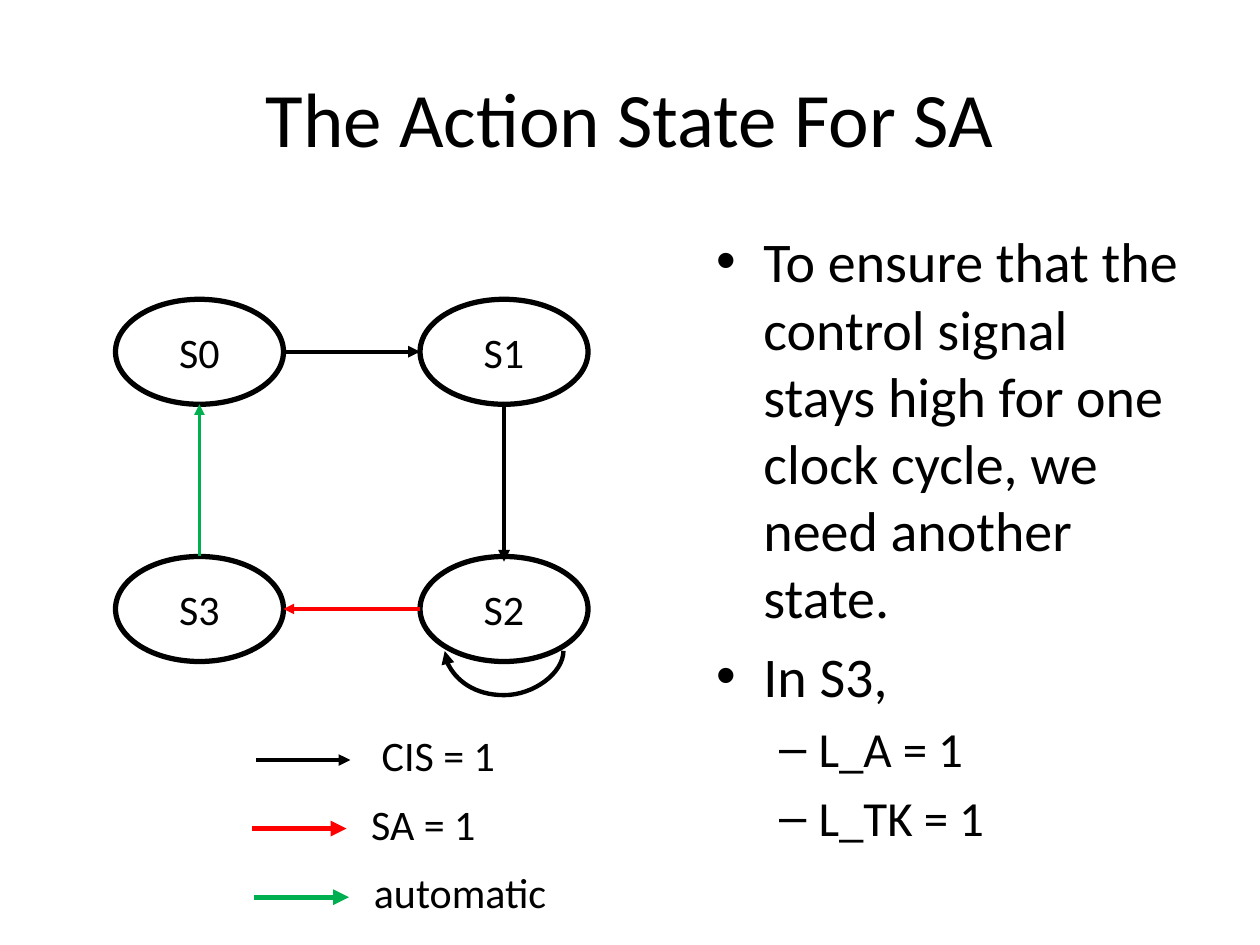
from dataclasses import dataclass

from lxml.etree import SubElement
from pptx import Presentation
from pptx.dml.color import RGBColor
from pptx.enum.shapes import MSO_CONNECTOR, MSO_SHAPE
from pptx.enum.text import MSO_ANCHOR, MSO_AUTO_SIZE, PP_ALIGN
from pptx.oxml.ns import qn
from pptx.util import Pt

COLORS = {"ink": "000000", "sa": "FF0000", "automatic": "00B050"}
STATE_WIDTH, STATE_HEIGHT = 96, 60
LEGEND_LENGTH = 54


@dataclass(frozen=True)
class State:
    label: str
    left: float
    top: float

    @property
    def center(self) -> float:
        return self.left + STATE_WIDTH / 2

    @property
    def middle(self) -> float:
        return self.top + STATE_HEIGHT / 2

    @property
    def right(self) -> float:
        return self.left + STATE_WIDTH

    @property
    def bottom(self) -> float:
        return self.top + STATE_HEIGHT


@dataclass(frozen=True)
class Arrow:
    start: tuple[float, float]
    end: tuple[float, float]
    color: str
    weight: float
    kind: MSO_CONNECTOR = MSO_CONNECTOR.STRAIGHT


@dataclass(frozen=True)
class Legend:
    label: str
    color: str
    weight: float
    line_left: float
    label_left: float
    label_width: float


def rgb(color: str) -> RGBColor:
    return RGBColor.from_string(COLORS[color])


def apply_format(target, values: dict) -> None:
    for attribute, value in values.items():
        setattr(target, attribute, value)


def place(shape, left: float, top: float, width: float, height: float) -> None:
    apply_format(shape, {"left": Pt(left), "top": Pt(top),
                         "width": Pt(width), "height": Pt(height)})


def write(paragraph, words: str, size: float) -> None:
    run = paragraph.add_run()
    run.text = words
    apply_format(run.font, {"name": "Calibri", "size": Pt(size)})
    run.font.color.rgb = rgb("ink")


def draw_state(slide, state: State) -> None:
    oval = slide.shapes.add_shape(MSO_SHAPE.OVAL, Pt(state.left), Pt(state.top),
                                  Pt(STATE_WIDTH), Pt(STATE_HEIGHT))
    oval.shadow.inherit = False
    oval.fill.background()
    oval.line.color.rgb = rgb("ink")
    oval.line.width = Pt(3)
    apply_format(oval.text_frame, {"word_wrap": False, "vertical_anchor": MSO_ANCHOR.MIDDLE})
    label = oval.text_frame.paragraphs[0]
    label.alignment = PP_ALIGN.CENTER
    write(label, state.label, 24)


def draw_arrow(slide, arrow: Arrow):
    connector = slide.shapes.add_connector(
        arrow.kind, *(Pt(value) for value in arrow.start + arrow.end))
    connector.line.color.rgb = rgb(arrow.color)
    connector.line.width = Pt(arrow.weight)
    SubElement(connector.line._get_or_add_ln(), qn("a:tailEnd"), type="triangle")
    SubElement(connector._element.spPr, qn("a:effectLst"))
    return connector


def draw_self_loop(slide, center: float, middle: float, span: float, depth: float) -> None:
    thickness = 0.12
    loop = draw_arrow(slide, Arrow((center, middle - span / 2),
                                   (center + thickness, middle + span / 2),
                                   "ink", 2.5, MSO_CONNECTOR.CURVE))
    properties = loop._element.spPr
    properties.find(qn("a:xfrm")).set("rot", "5400000")
    adjustments = properties.find(qn("a:prstGeom")).find(qn("a:avLst"))
    bend = round(depth / thickness * 100000)
    SubElement(adjustments, qn("a:gd"), name="adj1", fmla=f"val {bend}")


def draw_legend(slide, legend: Legend, middle: float) -> None:
    draw_arrow(slide, Arrow((legend.line_left, middle),
                            (legend.line_left + LEGEND_LENGTH, middle),
                            legend.color, legend.weight))
    caption = slide.shapes.add_textbox(Pt(legend.label_left), Pt(middle - 20.9),
                                       Pt(legend.label_width), Pt(36.4))
    apply_format(caption.text_frame, {"word_wrap": False,
                                      "auto_size": MSO_AUTO_SIZE.SHAPE_TO_FIT_TEXT})
    write(caption.text_frame.paragraphs[0], legend.label, 24)


def main() -> None:
    deck = Presentation()
    apply_format(deck, {"slide_width": Pt(720), "slide_height": Pt(540)})
    slide = deck.slides.add_slide(deck.slide_layouts[1])

    title, body = slide.placeholders
    place(title, 36, 21.6, 648, 90)
    write(title.text_frame.paragraphs[0], "The Action State For SA", 44)

    place(body, 402, 126, 282, 356.4)
    points = [
        (0, "To ensure that the control signal stays high for one clock cycle, "
            "we need another state."),
        (0, "In S3,"),
        (1, "L_A = 1"),
        (1, "L_TK = 1"),
    ]
    for number, (level, words) in enumerate(points):
        frame = body.text_frame
        paragraph = frame.add_paragraph() if number else frame.paragraphs[0]
        paragraph.level = level
        write(paragraph, words, 28 if level else 32)

    left, right, upper, lower = 66, 240, 171, 318
    s0, s1 = State("S0", left, upper), State("S1", right, upper)
    s2, s3 = State("S2", right, lower), State("S3", left, lower)
    for state in (s0, s1, s2, s3):
        draw_state(slide, state)

    transitions = [
        Arrow((s0.right, s0.middle), (s1.left, s1.middle), "ink", 2.25),
        Arrow((s1.center, s1.bottom), (s2.center, s2.top + 3), "ink", 2.25),
        Arrow((s2.left, s2.middle), (s3.right, s3.middle), "sa", 2),
        Arrow((s3.center, s3.top), (s0.center, s0.bottom), "automatic", 2),
    ]
    for transition in transitions:
        draw_arrow(slide, transition)
    draw_self_loop(slide, s2.center, s2.bottom - 6, 67.8, 26.8)

    legends = [
        Legend("CIS = 1", "ink", 2.25, 146.2, 211, 80),
        Legend("SA = 1", "sa", 3, 144, 205, 75),
        Legend("automatic", "automatic", 3, 145.4, 206.6, 114),
    ]
    for row, legend in enumerate(legends):
        draw_legend(slide, legend, 434.3 + row * 39.2)

    deck.save("out.pptx")


if __name__ == "__main__":
    main()
